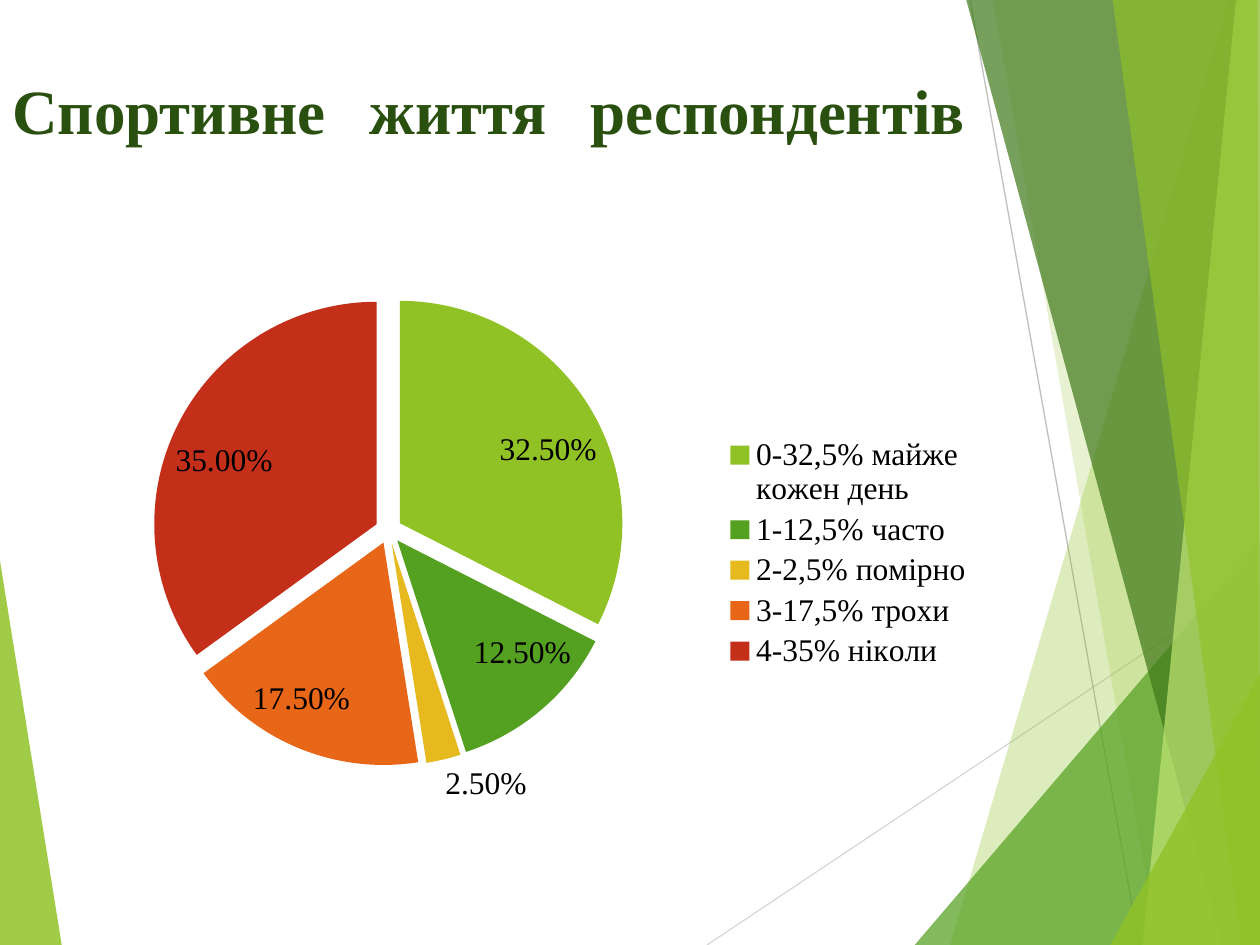
from lxml import etree
from pptx import Presentation
from pptx import util as u
from pptx.chart.data import CategoryChartData
from pptx.dml.color import RGBColor
from pptx.enum import chart as ch, shapes, text
from pptx.oxml.ns import qn

W, H = 720, 540
COLORS = {
    "lime": "90C226", "green": "54A021", "forest": "3F7819", "pale": "C0E474",
    "yellow": "E6B91E", "orange": "E76618", "red": "C42F1A",
    "title": "2A5010", "text": "000000", "grey": "BFBFBF", "light_grey": "D9D9D9",
}
SERIF = "Times New Roman"

# colour, opacity in percent, corners in points
FACETS = [
    ("lime", 85, [(-0.7, 316), (35.3, H), (-0.7, H)]),
    ("lime", 30, [(702, 0), (543, H), (W, H), (W, 0)]),
    ("lime", 20, [(567.5, 0), (661.5, H), (W, H), (W, 0)]),
    ("green", 72, [(522.7, H), (W, 309), (W, H)]),
    ("forest", 70, [(552.2, 0), (698.4, H), (W, H), (W, 0)]),
    ("pale", 70, [(706.3, 0), (653, H), (W, H), (W, 0)]),
    ("lime", 65, [(635.8, 0), (709.5, H), (W, H), (718.6, 0)]),
    ("lime", 80, [(634.5, H), (W, 385.2), (W, H)]),
]
ANSWERS = [
    ("0-32,5% майже кожен день", 0.325, "lime"),
    ("1-12,5% часто", 0.125, "green"),
    ("2-2,5% помірно", 0.025, "yellow"),
    ("3-17,5% трохи", 0.175, "orange"),
    ("4-35% ніколи", 0.35, "red"),
]


def rgb(name):
    return RGBColor.from_string(COLORS[name])


class Deck:
    def __init__(self):
        self.prs = Presentation()
        self.prs.slide_width, self.prs.slide_height = u.Pt(W), u.Pt(H)
        self.s = self.prs.slides.add_slide(self.prs.slide_layouts[6])

    def style(self, font, size, color="text", bold=False):
        font.name, font.size, font.bold = SERIF, u.Pt(size), bold
        font.color.rgb = rgb(color)

    def facet(self, color, opacity, corners):
        pts = [(u.Pt(x), u.Pt(y)) for x, y in corners]
        fb = self.s.shapes.build_freeform(*pts[0])
        fb.add_line_segments(pts[1:], close=True)
        sp = fb.convert_to_shape()
        sp.shadow.inherit = False
        sp.line.fill.background()
        sp.fill.solid()
        sp.fill.fore_color.rgb = rgb(color)
        clr = sp.fill._xPr.find(".//" + qn("a:srgbClr"))
        etree.SubElement(clr, qn("a:alpha"), val=str(opacity * 1000))

    def line(self, color, x1, y1, x2, y2):
        cn = self.s.shapes.add_connector(
            shapes.MSO_CONNECTOR.STRAIGHT, *map(u.Pt, (x1, y1, x2, y2)))
        cn.line.color.rgb, cn.line.width = rgb(color), u.Pt(0.75)
        etree.SubElement(cn._element.spPr, qn("a:effectLst"))

    def title(self, words, x, y, w, h):
        """The closing line break makes the single line stretch to full width."""
        tf = self.s.shapes.add_textbox(*map(u.Pt, (x, y, w, h))).text_frame
        tf.word_wrap = True
        tf.margin_top = u.Pt(9)
        tf.vertical_anchor = text.MSO_ANCHOR.TOP
        p = tf.paragraphs[0]
        p.alignment = text.PP_ALIGN.JUSTIFY
        r = p.add_run()
        r.text = words
        self.style(r.font, 36, "title", True)
        p.add_line_break()

    def pie(self, answers, x, y, w, h):
        data = CategoryChartData(number_format="0.00%")
        data.categories = [a[0] for a in answers]
        data.add_series("Series 1", [a[1] for a in answers])
        chart = self.s.shapes.add_chart(
            ch.XL_CHART_TYPE.PIE, *map(u.Pt, (x, y, w, h)), data).chart
        chart.has_title = False
        chart.font.name, chart.font.size = "Lato", u.Pt(18)
        chart.has_legend = True
        chart.legend.position = ch.XL_LEGEND_POSITION.RIGHT
        chart.legend.include_in_layout = False
        self.style(chart.legend.font, 18)

        plot = chart.plots[0]
        plot.vary_by_categories = True
        series = plot.series[0]
        for i, (_, _, color) in enumerate(answers):
            fill = series.points[i].format.fill
            fill.solid()
            fill.fore_color.rgb = rgb(color)
        explosion = etree.Element(qn("c:explosion"), val="6")
        series._element.find(qn("c:dPt")).addprevious(explosion)

        plot.has_data_labels = True
        dl = plot.data_labels
        dl.show_value, dl.show_percentage = True, False
        dl.number_format, dl.number_format_is_linked = "0.00%", False
        dl.position = ch.XL_LABEL_POSITION.BEST_FIT
        self.style(dl.font, 18)


def main():
    d = Deck()
    d.facet(*FACETS[0])
    d.line("light_grey", 404, H, W, 329)
    d.line("grey", 554.4, 0, 651, H)
    for facet in FACETS[1:]:
        d.facet(*facet)
    d.title("Спортивне життя респондентів", 0, 31.7, 558.7, 67.7)
    d.pie(ANSWERS, 36.7, 158.4, 527, 315.4)
    d.prs.save("out.pptx")


if __name__ == "__main__":
    main()
